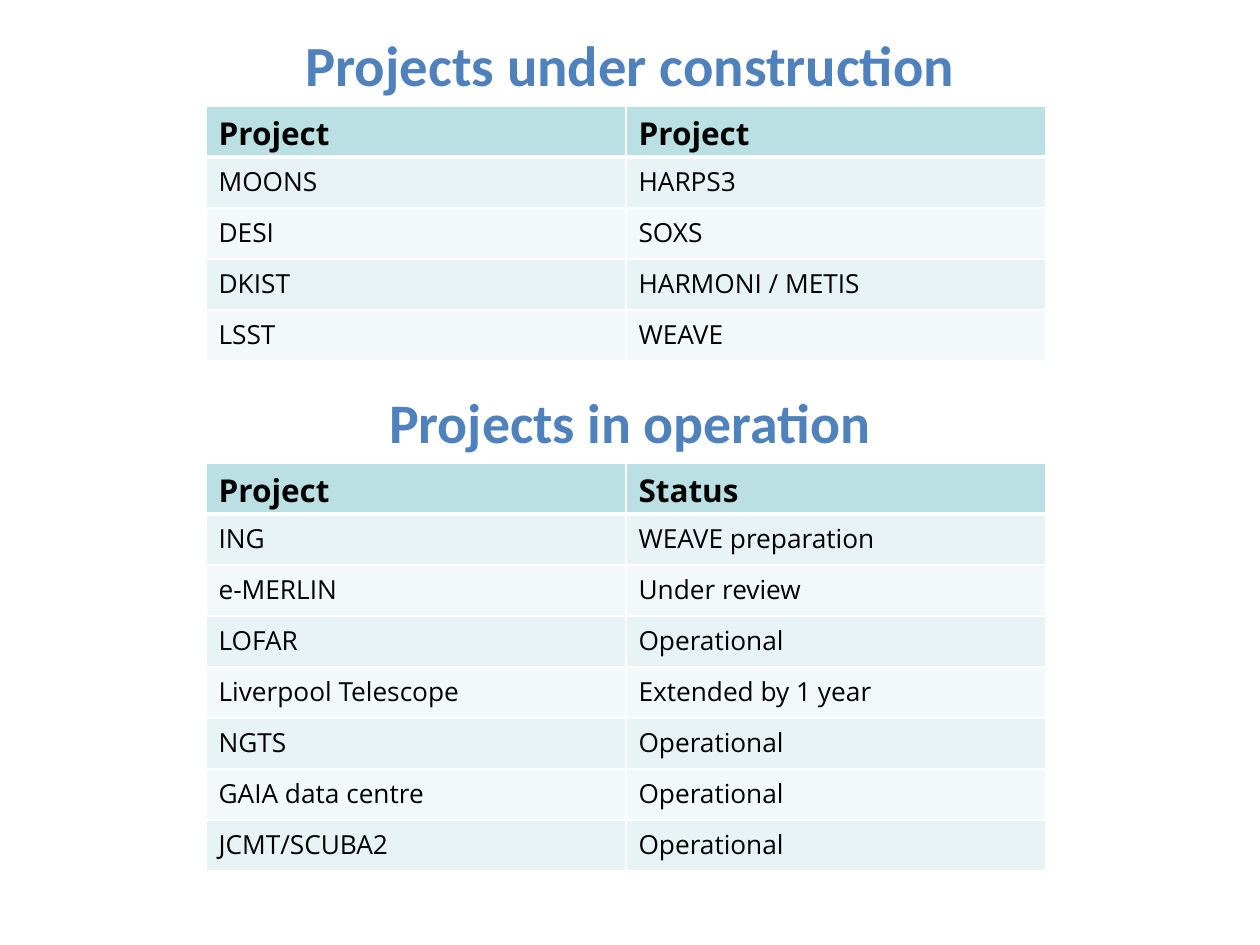
from lxml.etree import SubElement
from pptx import Presentation
from pptx.dml.color import RGBColor
from pptx.enum.text import MSO_ANCHOR, PP_ALIGN
from pptx.oxml.ns import qn
from pptx.util import Emu, Pt

SCALE = 914400 / 126
ROW_HEIGHT = 51
COLUMN_WIDTH = 420
TABLE_LEFT = 206
BORDERS = ("a:lnL", "a:lnR", "a:lnT", "a:lnB")

# heading, size in points, heading top, table top, rows
SECTIONS = [
    ("Projects under construction", 32.4, 29, 106, [
        ("Project", "Project"),
        ("MOONS", "HARPS3"),
        ("DESI", "SOXS"),
        ("DKIST", "HARMONI / METIS"),
        ("LSST", "WEAVE"),
    ]),
    ("Projects in operation", 31.9, 387, 463, [
        ("Project", "Status"),
        ("ING", "WEAVE preparation"),
        ("e-MERLIN", "Under review"),
        ("LOFAR", "Operational"),
        ("Liverpool Telescope", "Extended by 1 year"),
        ("NGTS", "Operational"),
        ("GAIA data centre", "Operational"),
        ("JCMT/SCUBA2", "Operational"),
    ]),
]


def px(length):
    return Emu(round(length * SCALE))


def set_font(paragraph, name, size, color, bold):
    font = paragraph.font
    font.name, font.size, font.bold = name, Pt(size), bold
    font.color.rgb = RGBColor.from_string(color)


deck = Presentation()
deck.slide_width, deck.slide_height = px(1260), px(945)
page = deck.slides.add_slide(deck.slide_layouts[6])

for heading, size, heading_top, table_top, rows in SECTIONS:
    box = page.shapes.add_textbox(0, px(heading_top), px(1260), px(69))
    frame = box.text_frame
    frame.word_wrap = True
    frame.vertical_anchor = MSO_ANCHOR.MIDDLE
    frame.margin_top = frame.margin_bottom = 0
    para = frame.paragraphs[0]
    para.text = heading
    para.alignment = PP_ALIGN.CENTER
    set_font(para, "Calibri", size, "4F81BD", True)

    table = page.shapes.add_table(
        len(rows), 2, px(TABLE_LEFT), px(table_top),
        px(2 * COLUMN_WIDTH), px(len(rows) * ROW_HEIGHT)).table
    for row_index, texts in enumerate(rows):
        is_header = row_index == 0
        band = "E7F3F4" if row_index % 2 else "F3F9FA"
        for column_index, text in enumerate(texts):
            cell = table.cell(row_index, column_index)
            cell.text = text
            set_font(cell.text_frame.paragraphs[0], "Open Sans",
                     18 if is_header else 15, "000000", is_header)
            properties = cell._tc.get_or_add_tcPr()
            for tag in BORDERS:
                # The rule under the header is shared with the row below it
                thick = (row_index, tag) in ((0, "a:lnB"), (1, "a:lnT"))
                line = SubElement(properties, qn(tag), w=str(Pt(3 if thick else 1)))
                fill = SubElement(line, qn("a:solidFill"))
                SubElement(fill, qn("a:srgbClr"), val="FFFFFF")
            cell.fill.solid()
            cell.fill.fore_color.rgb = RGBColor.from_string("BBE0E3" if is_header else band)

deck.save("out.pptx")
